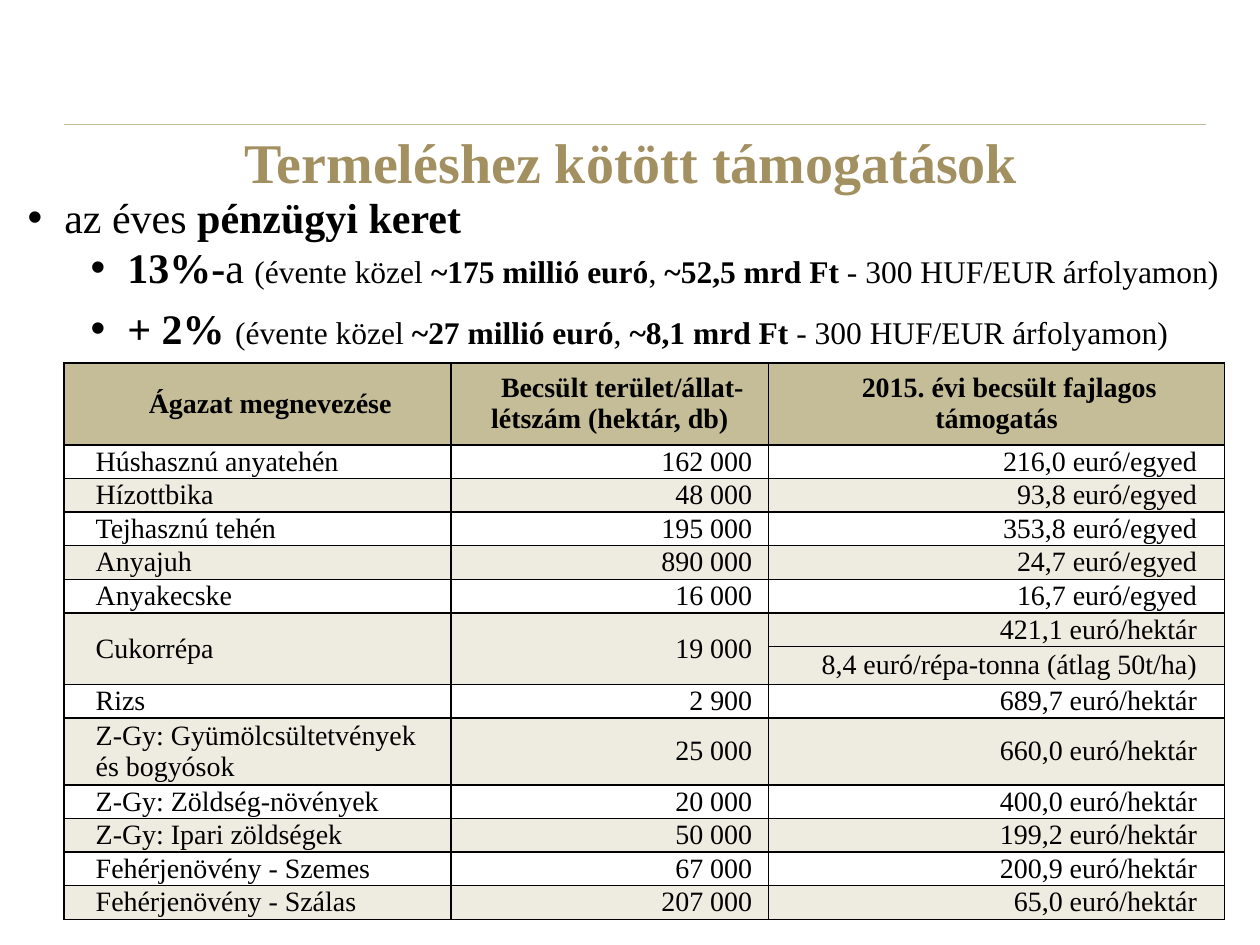
import pptx
import pptx.util
import pptx.dml.color
import pptx.enum.text
import pptx.enum.shapes
import pptx.oxml
import pptx.oxml.ns
import lxml.etree

Inches, Pt = pptx.util.Inches, pptx.util.Pt
ALIGN = pptx.enum.text.PP_ALIGN
MIDDLE = pptx.enum.text.MSO_ANCHOR.MIDDLE
qn = pptx.oxml.ns.qn

FONT = "Times New Roman"
COLOURS = {"title": "A29061", "text": "000000", "rule": "C4BD97",
           "header": "C4BD97", "band": "EEECE1", "border": "000000"}

TITLE = "Termeléshez kötött támogatások"

# Each bullet: level, space before, runs of (text, size, bold)
BULLETS = [
    (0, 0, [("az éves ", 24, False), ("pénzügyi keret", 24, True)]),
    (1, 0, [("13%-", 24, True), ("a ", 24, False),
            ("(évente közel ", 18, False), ("~175 millió euró", 18, True),
            (", ", 18, False), ("~52,5 mrd Ft", 18, True),
            (" - 300 HUF/EUR árfolyamon)", 18, False)]),
    (1, 6, [("+ 2% ", 24, True),
            ("(évente közel ", 18, False), ("~27 millió euró", 18, True),
            (", ", 18, False), ("~8,1 mrd Ft", 18, True),
            (" - 300 HUF/EUR árfolyamon)", 18, False)]),
]
BULLET_LEFT = [0.29, 0.79]

HEADERS = ["Ágazat megnevezése", "Becsült terület/állat-létszám (hektár, db)",
           "2015. évi becsült fajlagos támogatás"]
# Each sector: name, area or head count, one or more support rates
SECTORS = [
    ("Húshasznú anyatehén", "162 000", ["216,0 euró/egyed"]),
    ("Hízottbika", "48 000", ["93,8 euró/egyed"]),
    ("Tejhasznú tehén", "195 000", ["353,8 euró/egyed"]),
    ("Anyajuh", "890 000", ["24,7 euró/egyed"]),
    ("Anyakecske", "16 000", ["16,7 euró/egyed"]),
    ("Cukorrépa", "19 000",
     ["421,1 euró/hektár", "8,4 euró/répa-tonna (átlag 50t/ha)"]),
    ("Rizs", "2 900", ["689,7 euró/hektár"]),
    ("Z-Gy: Gyümölcsültetvények és bogyósok", "25 000", ["660,0 euró/hektár"]),
    ("Z-Gy: Zöldség-növények", "20 000", ["400,0 euró/hektár"]),
    ("Z-Gy: Ipari zöldségek", "50 000", ["199,2 euró/hektár"]),
    ("Fehérjenövény - Szemes", "67 000", ["200,9 euró/hektár"]),
    ("Fehérjenövény - Szálas", "207 000", ["65,0 euró/hektár"]),
]
COLUMN_WIDTHS = [3.07, 2.52, 3.62]
RIGHT_MARGINS = [0.05, 0.13, 0.22]
TABLE_HEIGHT = 4.42
TALL_ROWS = {0: 0.65, 7: 0.3, 9: 0.53}


def rgb(name):
    return pptx.dml.color.RGBColor.from_string(COLOURS[name])


def style_font(font, size, colour="text", bold=None):
    font.name, font.size, font.bold = FONT, Pt(size), bold
    font.color.rgb = rgb(colour)


def set_indent(paragraph, left, first):
    properties = paragraph._p.get_or_add_pPr()
    properties.set("marL", str(Inches(left)))
    properties.set("indent", str(Inches(first)))
    return properties


def place(shape, left, top, width, height):
    shape.left, shape.top = Inches(left), Inches(top)
    shape.width, shape.height = Inches(width), Inches(height)


def add_borders(cell):
    properties = cell._tc.get_or_add_tcPr()
    for side in ("lnL", "lnR", "lnT", "lnB"):
        line = lxml.etree.SubElement(properties, qn("a:" + side), w=str(Pt(1)))
        fill = lxml.etree.SubElement(line, qn("a:solidFill"))
        lxml.etree.SubElement(fill, qn("a:srgbClr"), val=COLOURS["border"])


def format_cell(cell, fill, right_margin=0.05):
    add_borders(cell)
    if fill:
        cell.fill.solid()
        cell.fill.fore_color.rgb = rgb(fill)
    else:
        cell.fill.background()
    cell.vertical_anchor = MIDDLE
    cell.margin_left, cell.margin_right = Inches(0.05), Inches(right_margin)
    cell.margin_top = cell.margin_bottom = 0


def write_cell(cell, text, align, left=0, first=0, bold=False):
    cell.text = text
    paragraph = cell.text_frame.paragraphs[0]
    paragraph.alignment = align
    set_indent(paragraph, left, first)
    style_font(paragraph.font, 16, bold=bold)


prs = pptx.Presentation()
prs.slide_width, prs.slide_height = Inches(10), Inches(7.5)
slide = prs.slides.add_slide(prs.slide_layouts[1])

# Rule above the title
rule = slide.shapes.add_connector(
    pptx.enum.shapes.MSO_CONNECTOR.STRAIGHT,
    Inches(0.51), Inches(0.99), Inches(9.57), Inches(0.99))
rule.line.color.rgb = rgb("rule")
rule.line.width = Pt(0.75)
lxml.etree.SubElement(rule._element.spPr, qn("a:effectLst"))

# Title
title = slide.shapes.title
place(title, 0.51, 0.92, 9, 0.71)
title.text_frame.text = TITLE
title.text_frame.vertical_anchor = MIDDLE
title.text_frame.auto_size = pptx.enum.text.MSO_AUTO_SIZE.NONE
heading = title.text_frame.paragraphs[0]
heading.alignment = ALIGN.CENTER
style_font(heading.font, 32, "title", True)

# Budget bullets
budget = slide.placeholders[1]
place(budget, 0.12, 1.47, 9.88, 1.4)
budget.text_frame.auto_size = pptx.enum.text.MSO_AUTO_SIZE.NONE
for index, (level, space_before, runs) in enumerate(BULLETS):
    frame = budget.text_frame
    paragraph = frame.add_paragraph() if index else frame.paragraphs[0]
    paragraph.level = level
    paragraph.alignment = ALIGN.JUSTIFY
    paragraph.space_before = Pt(space_before)
    properties = set_indent(paragraph, BULLET_LEFT[level], -0.29)
    lxml.etree.SubElement(properties, qn("a:buFont"), typeface="Arial")
    lxml.etree.SubElement(properties, qn("a:buChar"), char="•")
    for text, size, bold in runs:
        run = paragraph.add_run()
        run.text = text
        style_font(run.font, size, bold=bold)

# Support table
row_count = 1 + sum(len(rates) for _, _, rates in SECTORS)
support = slide.shapes.add_table(
    row_count, len(HEADERS), Inches(0.51), Inches(2.88),
    Inches(sum(COLUMN_WIDTHS)), Inches(TABLE_HEIGHT)).table
support.first_row = support.horz_banding = False
for column, width in zip(support.columns, COLUMN_WIDTHS):
    column.width = Inches(width)
plain_height = ((TABLE_HEIGHT - sum(TALL_ROWS.values()))
                / (row_count - len(TALL_ROWS)))
for index, row in enumerate(support.rows):
    row.height = Inches(TALL_ROWS.get(index, plain_height))

for column, text in enumerate(HEADERS):
    format_cell(support.cell(0, column), "header")
    write_cell(support.cell(0, column), text, ALIGN.CENTER, first=0.2, bold=True)

top = 1
for index, (sector, amount, rates) in enumerate(SECTORS):
    bottom = top + len(rates) - 1
    for row in range(top, bottom + 1):
        for column, margin in enumerate(RIGHT_MARGINS):
            format_cell(support.cell(row, column), "band" if index % 2 else None, margin)
        write_cell(support.cell(row, 2), rates[row - top], ALIGN.RIGHT)
    write_cell(support.cell(top, 0), sector, ALIGN.LEFT, left=0.2)
    write_cell(support.cell(top, 1), amount, ALIGN.RIGHT)
    if bottom > top:
        for column in (0, 1):
            support.cell(top, column).merge(support.cell(bottom, column))
    top = bottom + 1

prs.save("out.pptx")
